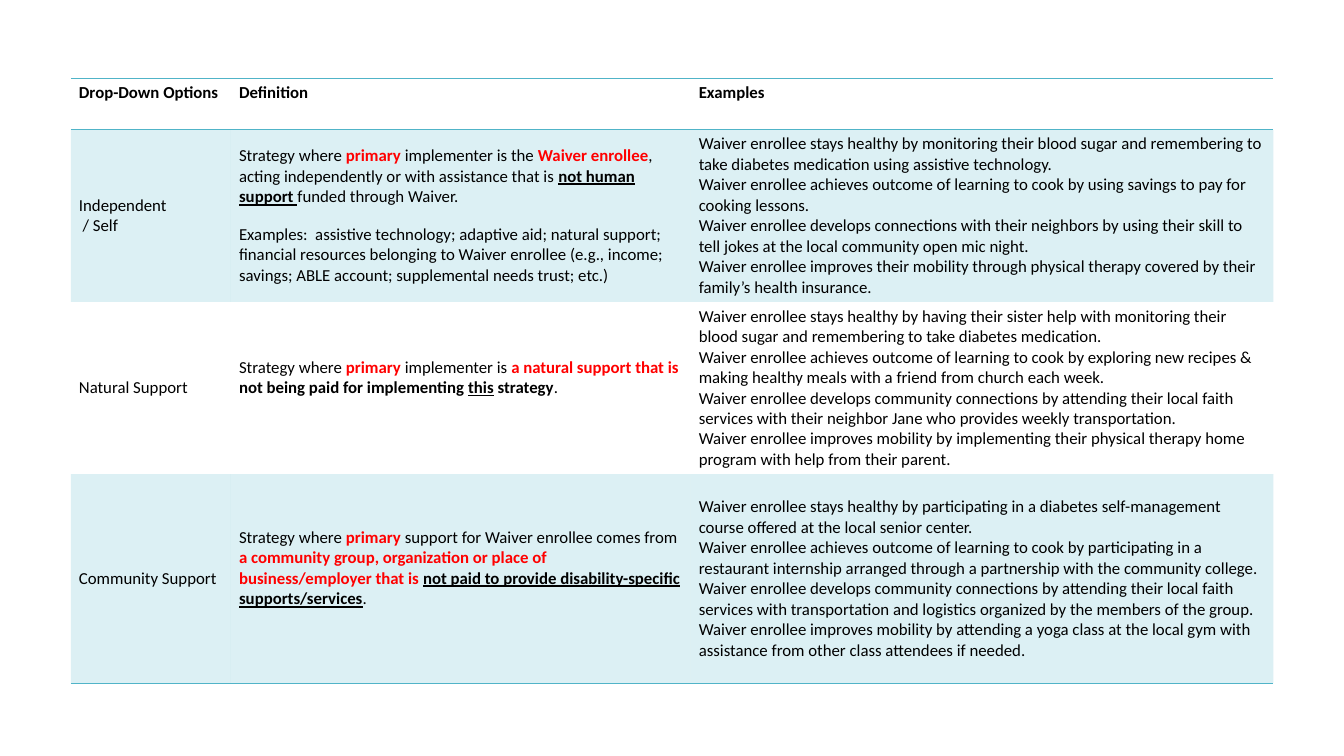
from lxml import etree
from pptx import Presentation
from pptx.dml.color import RGBColor
from pptx.enum.text import MSO_ANCHOR
from pptx.oxml.ns import qn
from pptx.util import Pt

TOP, MIDDLE = MSO_ANCHOR.TOP, MSO_ANCHOR.MIDDLE
BLANK = 6
PLAIN = "{2D5ABB26-0587-4C30-8999-92F81FD0307C}"
LINE = 14.6

HEADS = ["Drop-Down Options", "Definition", "Examples"]
ROWS = [
    (
        ["Independent", " / Self"],
        [
            [
                "Strategy where ", ("primary", "red"), " implementer is the ",
                ("Waiver enrollee", "red"),
                ", acting independently or with assistance that is ",
                ("not human support ", "under"), "funded through Waiver.",
            ],
            "Examples:  assistive technology; adaptive aid; natural support; "
            "financial resources belonging to Waiver enrollee (e.g., income; "
            "savings; ABLE account; supplemental needs trust; etc.)",
        ],
        [
            "Waiver enrollee stays healthy by monitoring their blood sugar and "
            "remembering to take diabetes medication using assistive technology.",
            "Waiver enrollee achieves outcome of learning to cook by using "
            "savings to pay for cooking lessons.",
            "Waiver enrollee develops connections with their neighbors by using "
            "their skill to tell jokes at the local community open mic night.",
            "Waiver enrollee improves their mobility through physical therapy "
            "covered by their family’s health insurance.",
        ],
    ),
    (
        ["Natural Support"],
        [
            [
                "Strategy where ", ("primary ", "red"), "implementer is ",
                ("a natural support that is ", "red"),
                ("not being paid for implementing ", "bold"),
                ("this", "under"), (" strategy", "bold"), ".",
            ],
        ],
        [
            "Waiver enrollee stays healthy by having their sister help with "
            "monitoring their blood sugar and remembering to take diabetes medication.",
            "Waiver enrollee achieves outcome of learning to cook by exploring new "
            "recipes & making healthy meals with a friend from church each week.",
            "Waiver enrollee develops community connections by attending their local "
            "faith services with their neighbor Jane who provides weekly transportation.",
            "Waiver enrollee improves mobility by implementing their physical therapy "
            "home program with help from their parent.",
        ],
    ),
    (
        ["Community Support"],
        [
            [
                "Strategy where ", ("primary", "red"),
                " support for Waiver enrollee comes from ",
                ("a community group, organization or place of "
                 "business/employer that is ", "red"),
                ("not paid to provide disability-specific supports/services", "under"),
                ".",
            ],
        ],
        [
            "Waiver enrollee stays healthy by participating in a diabetes "
            "self-management course offered at the local senior center.",
            "Waiver enrollee achieves outcome of learning to cook by participating in a "
            "restaurant internship arranged through a partnership with the community college.",
            "Waiver enrollee develops community connections by attending their local faith "
            "services with transportation and logistics organized by the members of the group.",
            "Waiver enrollee improves mobility by attending a yoga class at the local gym "
            "with assistance from other class attendees if needed.",
        ],
    ),
]


def color(code):
    return RGBColor.from_string(code)


def write(frame, paras, size=12, font="Calibri", ink="000000", bold=False, gap=0):
    for i, para in enumerate(paras):
        line = frame.add_paragraph() if i else frame.paragraphs[0]
        if i and gap:
            line.space_before = Pt(gap)
        for part in [para] if isinstance(para, str) else para:
            words, mark = (part, "") if isinstance(part, str) else part
            run = line.add_run()
            run.text = words
            run.font.size = Pt(size)
            run.font.name = font
            run.font.bold = bold or bool(mark)
            run.font.underline = mark == "under"
            run.font.color.rgb = color("FF0000" if mark == "red" else ink)


class Page:
    teal = "50B4C8"
    side, edge = 5.8, 3

    def __init__(self, deck):
        self.slide = deck.slides.add_slide(deck.slide_layouts[BLANK])

    def table(self, left, top, cols, rows):
        shape = self.slide.shapes.add_table(
            len(rows), len(cols), Pt(left), Pt(top), Pt(sum(cols)), Pt(sum(rows)))
        grid = shape.table
        grid.horz_banding = False
        grid._tbl.tblPr.find(qn("a:tableStyleId")).text = PLAIN
        for col, width in zip(grid.columns, cols):
            col.width = Pt(width)
        for row, height in zip(grid.rows, rows):
            row.height = Pt(height)
        return grid

    def cell(self, cell, paras, anchor=MIDDLE, lines=(), tint=False, lift=0, **form):
        cell.vertical_anchor = anchor
        cell.margin_left = cell.margin_right = Pt(self.side)
        cell.margin_top = Pt(self.edge)
        cell.margin_bottom = Pt(self.edge + lift)
        for name in lines:
            self.border(cell, name)
        self.fill(cell, tint)
        write(cell.text_frame, paras, **form)

    def border(self, cell, name):
        line = etree.SubElement(cell._tc.get_or_add_tcPr(), qn(name), w=str(Pt(1)))
        fill = etree.SubElement(line, qn("a:solidFill"))
        etree.SubElement(fill, qn("a:srgbClr"), val=self.teal)

    def fill(self, cell, tint):
        if not tint:
            cell.fill.background()
            return
        cell.fill.solid()
        cell.fill.fore_color.rgb = color(self.teal)
        tone = cell._tc.tcPr.find(qn("a:solidFill")).find(qn("a:srgbClr"))
        etree.SubElement(tone, qn("a:alpha"), val="20000")


def main():
    deck = Presentation()
    deck.slide_width, deck.slide_height = Pt(960), Pt(540)
    page = Page(deck)
    grid = page.table(50.6, 56, [114.4, 328.4, 416.2], [36.7, 121, 121, 149.3])
    for c, head in enumerate(HEADS):
        page.cell(grid.cell(0, c), [head], anchor=TOP,
                  lines=["a:lnT", "a:lnB"], bold=True)
    for r, row in enumerate(ROWS, 1):
        last = r == len(ROWS)
        for c, paras in enumerate(row):
            page.cell(grid.cell(r, c), paras, lines=["a:lnB"] if last else [],
                      tint=r % 2 == 1, lift=LINE if c == 1 and r > 1 else 0,
                      gap=12 if c == 1 else 0)
    deck.save("out.pptx")


if __name__ == "__main__":
    main()
